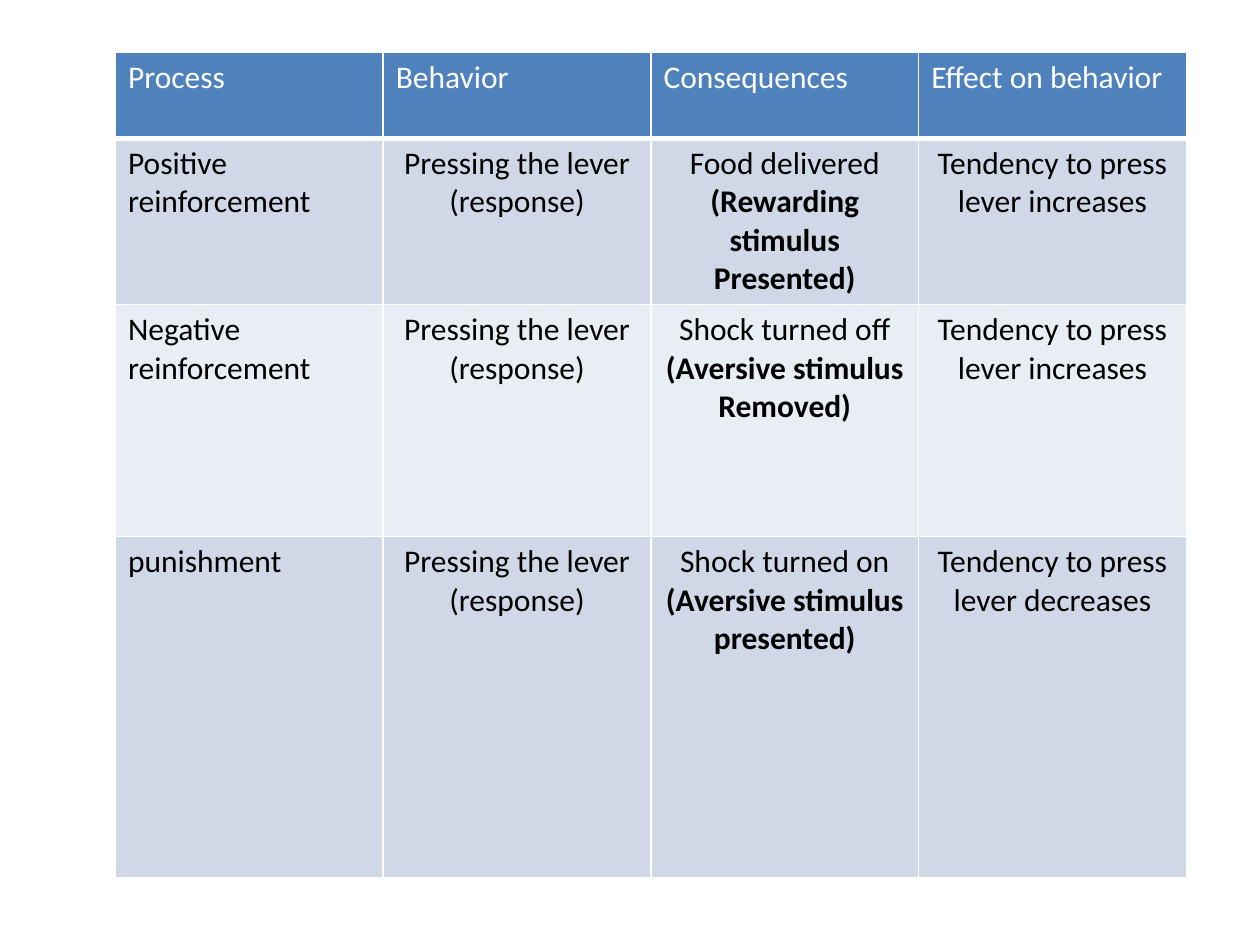
from lxml.etree import SubElement
from pptx import Presentation
from pptx.dml.color import RGBColor as RGB
from pptx.enum.text import PP_ALIGN as Align
from pptx.oxml.ns import qn
from pptx.util import Pt

COLORS = {
    "header": "4F81BD",
    "odd_row": "D0D8E8",
    "even_row": "E9EDF4",
    "border": "FFFFFF",
    "header_text": "FFFFFF",
    "body_text": "000000",
}

# Each cell is a list of paragraphs, each paragraph a list of (text, bold) runs
LEVER = [[("Pressing the lever (response)", False)]]


def tendency(change):
    return [[("Tendency to press", False)], [(f"lever {change}", False)]]


HEADINGS = ["Process", "Behavior", "Consequences", "Effect on behavior"]
PROCESSES = [
    ("Positive reinforcement",
     [[("Food delivered ", False), ("(Rewarding stimulus", True)], [("Presented)", True)]],
     "increases"),
    ("Negative reinforcement",
     [[("Shock turned off", False)], [("(Aversive stimulus", True)], [("Removed)", True)]],
     "increases"),
    ("punishment",
     [[("Shock turned on", False), (" (Aversive stimulus presented)", True)]],
     "decreases"),
]
ROWS = [[[[(heading, False)]] for heading in HEADINGS]] + [
    [[[(process, False)]], LEVER, consequence, tendency(change)]
    for process, consequence, change in PROCESSES
]

LEFT, TOP, WIDTH = 66, 30, 612
ROW_HEIGHTS = [49, 91, 132.5, 195]


def set_borders(cell, is_header):
    properties = cell._tc.get_or_add_tcPr()
    for side in ("L", "R", "T", "B"):
        weight = 3 if is_header and side == "B" else 1
        line = SubElement(properties, qn(f"a:ln{side}"), w=str(Pt(weight)))
        fill = SubElement(line, qn("a:solidFill"))
        SubElement(fill, qn("a:srgbClr"), val=COLORS["border"])


def write_cell(cell, paragraphs, text_color, align):
    frame = cell.text_frame
    for index, runs in enumerate(paragraphs):
        paragraph = frame.add_paragraph() if index else frame.paragraphs[0]
        paragraph.alignment = align
        for text, bold in runs:
            run = paragraph.add_run()
            run.text = text
            font = run.font
            font.name, font.size, font.bold = "Calibri", Pt(18), bold
            font.color.rgb = RGB.from_string(text_color)


prs = Presentation()
prs.slide_width, prs.slide_height = Pt(720), Pt(540)
slide = prs.slides.add_slide(prs.slide_layouts[6])

# Reinforcement and punishment table
table = slide.shapes.add_table(
    len(ROWS), len(HEADINGS), Pt(LEFT), Pt(TOP), Pt(WIDTH), Pt(sum(ROW_HEIGHTS))
).table
for column in table.columns:
    column.width = Pt(WIDTH / len(HEADINGS))

for r, (cells, height) in enumerate(zip(ROWS, ROW_HEIGHTS)):
    table.rows[r].height = Pt(height)
    is_header = r == 0
    fill_name = "header" if is_header else "odd_row" if r % 2 else "even_row"
    text_color = COLORS["header_text" if is_header else "body_text"]
    for c, paragraphs in enumerate(cells):
        cell = table.cell(r, c)
        set_borders(cell, is_header)
        cell.fill.solid()
        cell.fill.fore_color.rgb = RGB.from_string(COLORS[fill_name])
        align = Align.LEFT if is_header or c == 0 else Align.CENTER
        write_cell(cell, paragraphs, text_color, align)

prs.save("out.pptx")
